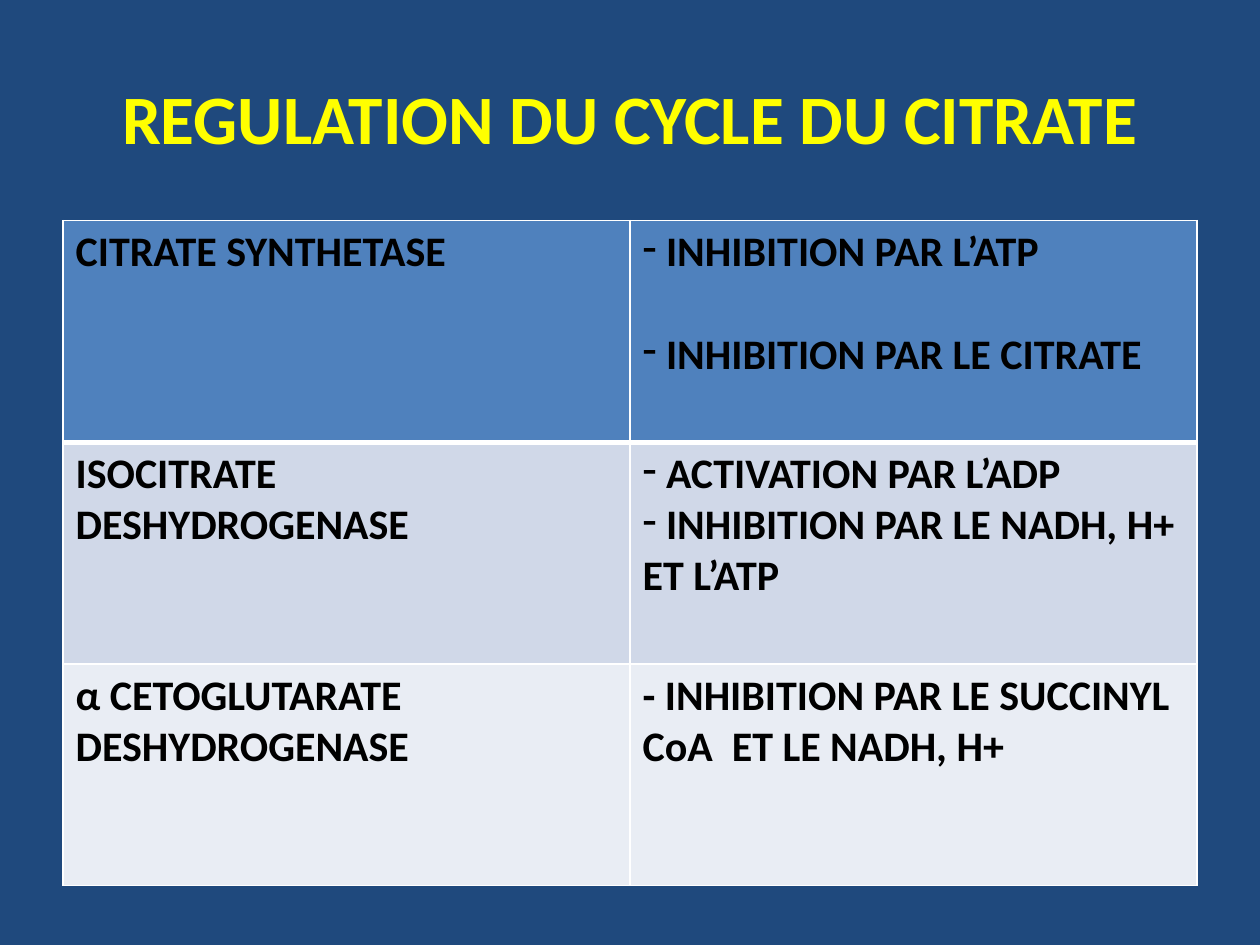
import pptx
import pptx.dml.color
import pptx.enum.text
import pptx.oxml
import pptx.oxml.ns
import pptx.util

Inches, Pt = pptx.util.Inches, pptx.util.Pt
RGB = pptx.dml.color.RGBColor.from_string

# Content: each enzyme with its regulations as (bullet, text)
TITLE = "REGULATION DU CYCLE DU CITRATE"
REGULATIONS = [
    ("CITRATE SYNTHETASE",
     [("-", " INHIBITION PAR L’ATP"), ("-", " INHIBITION PAR LE CITRATE")]),
    ("ISOCITRATE  DESHYDROGENASE",
     [("-", " ACTIVATION PAR L’ADP"),
      ("-", " INHIBITION PAR LE NADH, H+ ET L’ATP")]),
    ("α CETOGLUTARATE DESHYDROGENASE",
     [(None, "- INHIBITION PAR LE SUCCINYL CoA  ET LE NADH, H+")]),
]

THEME = {
    "font": "Calibri",
    "background": "1F497D",
    "title": "FFFF00",
    "text": "000000",
    "border": "FFFFFF",
    "rows": ["4F81BD", "D0D8E8", "E9EDF4"],
    "title_size": 39.6,
    "text_size": 24,
    "first_row_gap": 29.3,
}
LEFT, WIDTH = 0.5, 9
TABLE_TOP, ROW_HEIGHT = 1.75, 1.76


def add_text(paragraph, text, size, color):
    run = paragraph.add_run()
    run.text = text
    run.font.name = THEME["font"]
    run.font.size = Pt(size)
    run.font.bold = True
    run.font.color.rgb = RGB(color)


def add_bullet(paragraph, mark):
    properties = paragraph._p.get_or_add_pPr()
    properties.set("marL", "0")
    properties.set("indent", "0")
    bullet = pptx.oxml.parse_xml(
        f'<a:buChar {pptx.oxml.ns.nsdecls("a")} char="{mark}"/>')
    properties.append(bullet)


def set_borders(cell, top, bottom):
    properties = cell._tc.get_or_add_tcPr()
    widths = {"lnL": 1, "lnR": 1, "lnT": top, "lnB": bottom}
    for position, (side, width) in enumerate(widths.items()):
        properties.insert(position, pptx.oxml.parse_xml(
            f'<a:{side} {pptx.oxml.ns.nsdecls("a")} w="{Pt(width)}"><a:solidFill>'
            f'<a:srgbClr val="{THEME["border"]}"/></a:solidFill></a:{side}>'))


def fill_cell(cell, lines, row):
    cell.fill.solid()
    cell.fill.fore_color.rgb = RGB(THEME["rows"][row])
    set_borders(cell, top=3 if row == 1 else 1, bottom=3 if row == 0 else 1)
    for index, (mark, text) in enumerate(lines):
        frame = cell.text_frame
        paragraph = frame.add_paragraph() if index else frame.paragraphs[0]
        if index and row == 0:
            paragraph.space_before = Pt(THEME["first_row_gap"])
        if mark:
            add_bullet(paragraph, mark)
        add_text(paragraph, text, THEME["text_size"], THEME["text"])


def main():
    deck = pptx.Presentation()
    deck.slide_width, deck.slide_height = Inches(10), Inches(7.5)
    slide = deck.slides.add_slide(deck.slide_layouts[6])
    slide.background.fill.solid()
    slide.background.fill.fore_color.rgb = RGB(THEME["background"])

    # Title
    heading = slide.shapes.add_textbox(
        Inches(LEFT), Inches(0.3), Inches(WIDTH), Inches(1.25)).text_frame
    heading.word_wrap = True
    heading.vertical_anchor = pptx.enum.text.MSO_ANCHOR.MIDDLE
    heading.paragraphs[0].alignment = pptx.enum.text.PP_ALIGN.CENTER
    add_text(heading.paragraphs[0], TITLE, THEME["title_size"], THEME["title"])

    # Enzymes and their regulation
    regulation = slide.shapes.add_table(
        len(REGULATIONS), 2, Inches(LEFT), Inches(TABLE_TOP),
        Inches(WIDTH), Inches(ROW_HEIGHT * len(REGULATIONS))).table
    for row, (enzyme, effects) in enumerate(REGULATIONS):
        regulation.rows[row].height = Inches(ROW_HEIGHT)
        fill_cell(regulation.cell(row, 0), [(None, enzyme)], row)
        fill_cell(regulation.cell(row, 1), effects, row)

    deck.save("out.pptx")


if __name__ == "__main__":
    main()
